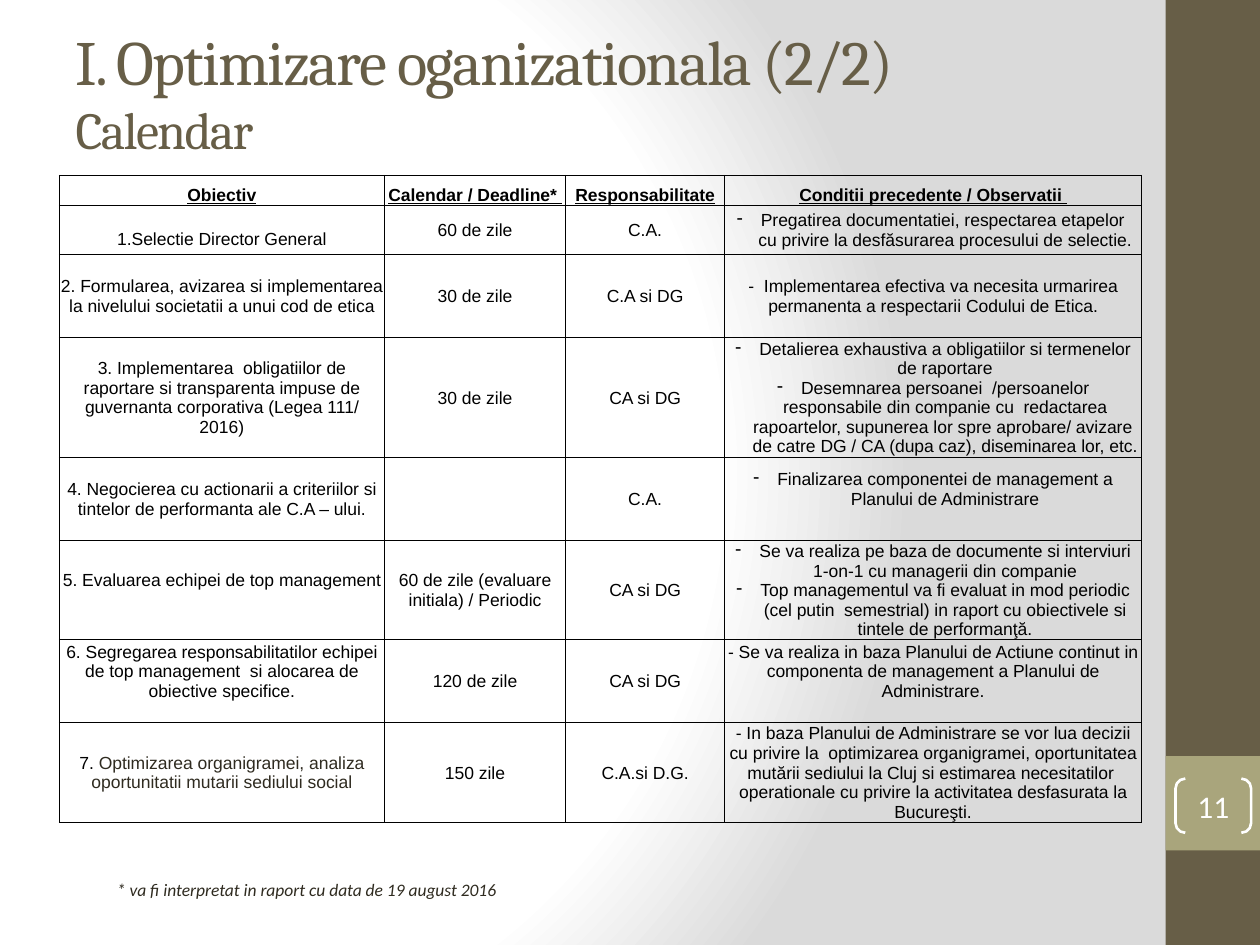
from dataclasses import dataclass
from copy import deepcopy

from lxml.etree import SubElement
from pptx import Presentation
from pptx.dml.color import RGBColor
from pptx.enum.shapes import MSO_SHAPE
from pptx.enum.text import MSO_ANCHOR, PP_ALIGN
from pptx.oxml import parse_xml
from pptx.oxml.ns import nsdecls, qn
from pptx.util import Inches, Pt

BLACK = RGBColor(0x00, 0x00, 0x00)
WHITE = RGBColor(0xFF, 0xFF, 0xFF)
BROWN = RGBColor(0x67, 0x5E, 0x47)
OLIVE = RGBColor(0xA9, 0xA5, 0x7C)
DARK = RGBColor(0x2F, 0x2B, 0x20)

WIDTH, HEIGHT = 10, 7.5
BAND = 0.75                      # side band width and number tile side
HALF_LINE = 0.16                 # margin that shifts a cell's text by half a line
COLUMNS = [2.58, 1.44, 1.26, 3.31]
ROWS = [0.24, 0.39, 0.66, 0.95, 0.66, 0.78, 0.66, 0.79]


@dataclass(frozen=True)
class Entry:
    """Content of one table cell."""
    paragraphs: tuple[str, ...]
    bullet: bool = False
    above: float = 0.01
    below: float = 0
    prefix: str = ""             # black lead-in before dark text


def plain(text: str, **options) -> Entry:
    return Entry((text,), **options)


def dashed(*texts: str, **options) -> Entry:
    return Entry(texts, bullet=True, **options)


HEADER = ["Obiectiv", "Calendar / Deadline* ", "Responsabilitate",
          "Conditii precedente / Observatii "]
BODY = [
    [plain("1.Selectie Director General", above=HALF_LINE),
     plain("60 de zile"), plain("C.A."),
     dashed("Pregatirea documentatiei, respectarea etapelor  cu privire la "
            "desfăsurarea procesului de selectie.")],
    [plain("2. Formularea, avizarea si implementarea la nivelului societatii "
           "a unui cod de etica"),
     plain("30 de zile"), plain("C.A si DG"),
     plain("-  Implementarea efectiva va necesita urmarirea permanenta a "
           "respectarii Codului de Etica.")],
    [plain("3. Implementarea  obligatiilor de raportare si transparenta impuse "
           "de guvernanta corporativa (Legea 111/ 2016)"),
     plain("30 de zile"), plain("CA si DG"),
     dashed("Detalierea exhaustiva a obligatiilor si termenelor de raportare",
            "Desemnarea persoanei  /persoanelor responsabile din companie cu  "
            "redactarea rapoartelor, supunerea lor spre aprobare/ avizare  de "
            "catre DG / CA (dupa caz), diseminarea lor, etc.")],
    [plain("4. Negocierea cu actionarii a criteriilor si tintelor de "
           "performanta ale C.A – ului."),
     None, plain("C.A."),
     dashed("Finalizarea componentei de management a Planului de Administrare",
            below=HALF_LINE)],
    [plain("5. Evaluarea echipei de top management", below=HALF_LINE),
     plain("60 de zile (evaluare initiala) / Periodic"), plain("CA si DG"),
     dashed("Se va realiza pe baza de documente si interviuri 1-on-1 cu "
            "managerii din companie",
            "Top managementul va fi evaluat in mod periodic (cel putin  "
            "semestrial) in raport cu obiectivele si tintele de performanţă.")],
    [plain("6. Segregarea responsabilitatilor echipei de top management  si "
           "alocarea de obiective specifice.", below=HALF_LINE),
     plain("120 de zile"), plain("CA si DG"),
     plain("- Se va realiza in baza Planului de Actiune continut in componenta "
           "de management a Planului de Administrare.", below=HALF_LINE)],
    [plain("Optimizarea organigramei, analiza oportunitatii mutarii sediului "
           "social", prefix="7. "),
     plain("150 zile"), plain("C.A.si D.G."),
     plain("- In baza Planului de Administrare se vor lua decizii cu privire "
           "la  optimizarea organigramei, oportunitatea mutării sediului la "
           "Cluj si estimarea necesitatilor  operationale cu privire la "
           "activitatea desfasurata la Bucureşti.")],
]


def add_span(para, text: str, size: float, face: str, color: RGBColor):
    span = para.add_run()
    span.text = text
    span.font.size, span.font.name = Pt(size), face
    span.font.color.rgb = color
    return span


def add_block(page, left: float, top: float, width: float, height: float,
              color: RGBColor) -> None:
    block = page.shapes.add_shape(MSO_SHAPE.RECTANGLE, Inches(left), Inches(top),
                                  Inches(width), Inches(height))
    block.shadow.inherit = False
    block.fill.solid()
    block.fill.fore_color.rgb = color
    block.line.fill.background()


def set_background(page) -> None:
    page.background.fill.gradient()
    properties = page.background._cSld.find(qn("p:bg")).find(qn("p:bgPr"))
    stops = "".join(f'<a:gs pos="{share * 1000}"><a:srgbClr val="{color}"/></a:gs>'
                    for share, color in [(0, "FFFFFF"), (75, "FFFFFF"), (100, "DADADA")])
    properties.replace(properties.find(qn("a:gradFill")), parse_xml(
        f'<a:gradFill {nsdecls("a")} rotWithShape="1"><a:gsLst>{stops}</a:gsLst>'
        '<a:path path="circle"><a:fillToRect l="20000" t="50000" r="100000" b="50000"/>'
        '</a:path></a:gradFill>'))


def add_borders(cell) -> None:
    properties = cell._tc.get_or_add_tcPr()
    for index, side in enumerate(("lnL", "lnR", "lnT", "lnB")):
        properties.insert(index, parse_xml(
            f'<a:{side} {nsdecls("a")} w="{Pt(0.5)}"><a:solidFill>'
            f'<a:srgbClr val="{BLACK}"/></a:solidFill></a:{side}>'))


def add_dash(para) -> None:
    properties = para._p.get_or_add_pPr()
    properties.set("marL", str(Inches(0.19)))
    properties.set("indent", str(-Inches(0.19)))
    SubElement(properties, qn("a:buFontTx"))
    SubElement(properties, qn("a:buChar")).set("char", "-")


def fill_cell(cell, entry: Entry | None, header: bool) -> None:
    cell.fill.background()
    add_borders(cell)
    if entry is None:
        return
    cell.vertical_anchor = MSO_ANCHOR.BOTTOM if header else MSO_ANCHOR.MIDDLE
    cell.margin_left = cell.margin_right = Inches(0.01)
    cell.margin_top, cell.margin_bottom = Inches(entry.above), Inches(entry.below)
    for index, text in enumerate(entry.paragraphs):
        frame = cell.text_frame
        para = frame.add_paragraph() if index else frame.paragraphs[0]
        para.alignment = PP_ALIGN.CENTER
        if entry.bullet:
            add_dash(para)
        if entry.prefix:
            add_span(para, entry.prefix, 10, "Arial", BLACK)
        span = add_span(para, text, 10, "Arial", DARK if entry.prefix else BLACK)
        span.font.bold = span.font.underline = header


def add_calendar(page) -> None:
    table = page.shapes.add_table(len(ROWS), len(COLUMNS), Inches(0.47), Inches(1.39),
                                  Inches(sum(COLUMNS)), Inches(sum(ROWS))).table
    table.first_row = table.horz_banding = False
    for column, width in zip(table.columns, COLUMNS):
        column.width = Inches(width)
    entries = [[plain(text) for text in HEADER]] + BODY
    for index, (row, height) in enumerate(zip(table.rows, ROWS)):
        row.height = Inches(height)
        for cell, entry in zip(row.cells, entries[index]):
            fill_cell(cell, entry, header=index == 0)


def add_title(page) -> None:
    title = page.shapes.title
    title.left, title.top = Inches(0.5), Inches(0.3)
    title.width, title.height = Inches(9), Inches(0.85)
    title.text_frame.vertical_anchor = MSO_ANCHOR.MIDDLE
    para = title.text_frame.paragraphs[0]
    para.alignment = PP_ALIGN.LEFT
    heading = add_span(para, "I. Optimizare oganizationala (2/2)", 36, "Cambria", BROWN)
    heading.font._element.set("spc", "-100")
    para.add_line_break()
    para._p[-1].append(deepcopy(heading.font._element))  # break as tall as the heading
    subheading = add_span(para, "Calendar", 29.7, "Cambria", BROWN)
    subheading.font._element.set("spc", "-100")


def add_page_number(page) -> None:
    bracket = page.shapes.add_shape(MSO_SHAPE.DOUBLE_BRACKET, Inches(9.33), Inches(6.18),
                                    Inches(0.6), Inches(0.43))
    bracket.adjustments[0] = 0.18
    bracket.shadow.inherit = False
    bracket.fill.background()
    bracket.line.color.rgb, bracket.line.width = WHITE, Pt(1.5)
    frame = bracket.text_frame
    frame.margin_left = frame.margin_right = frame.margin_top = frame.margin_bottom = 0
    frame.vertical_anchor = MSO_ANCHOR.MIDDLE
    frame.paragraphs[0].alignment = PP_ALIGN.CENTER
    add_span(frame.paragraphs[0], "11", 18, "Calibri", WHITE)


def add_footnote(page) -> None:
    box = page.shapes.add_textbox(Inches(0.83), Inches(6.93), Inches(7.87), Inches(0.29))
    box.text_frame.word_wrap = True
    span = add_span(box.text_frame.paragraphs[0],
                    "* va fi interpretat in raport cu data de 19 august 2016",
                    10, "Calibri", DARK)
    span.font.italic = True


def main() -> None:
    deck = Presentation()
    deck.slide_width, deck.slide_height = Inches(WIDTH), Inches(HEIGHT)
    page = deck.slides.add_slide(deck.slide_layouts[5])
    set_background(page)
    # Side band with the number tile
    add_block(page, WIDTH - BAND, 0, BAND, HEIGHT, BROWN)
    add_block(page, WIDTH - BAND, HEIGHT * 0.8, BAND, BAND, OLIVE)
    add_title(page)
    add_page_number(page)
    add_calendar(page)
    add_footnote(page)
    deck.save("out.pptx")


if __name__ == "__main__":
    main()
